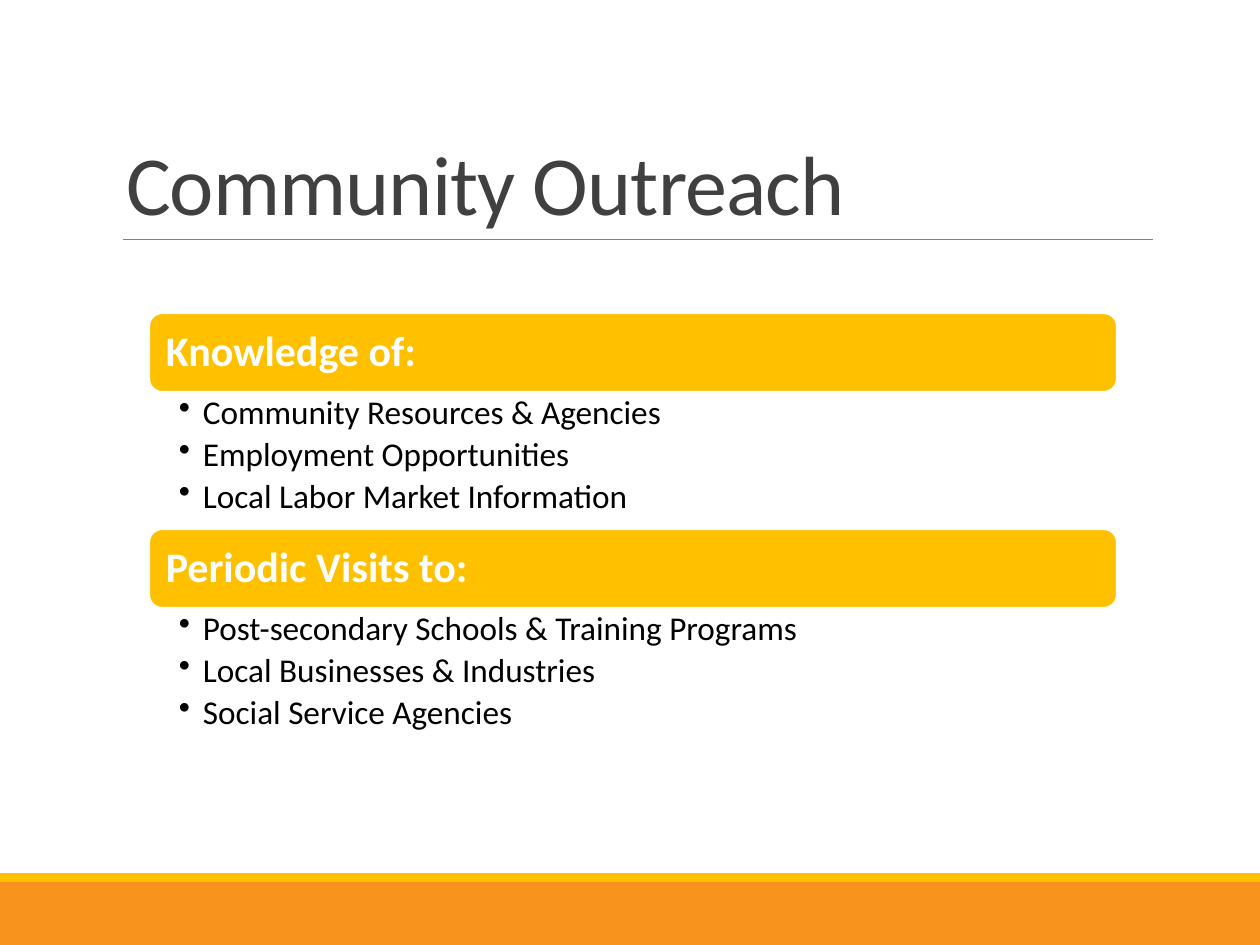
"""Build the Community Outreach slide."""
import dataclasses

import lxml.etree
import pptx
import pptx.dml.color
import pptx.enum.shapes
import pptx.enum.text
import pptx.oxml.ns
import pptx.util

PX_PER_INCH = 126
SHAPE = pptx.enum.shapes.MSO_SHAPE
ANCHOR = pptx.enum.text.MSO_ANCHOR


@dataclasses.dataclass(frozen=True)
class Theme:
    """Colours, font and type sizes of the slide."""
    font: str = "Calibri"
    orange: str = "F8931D"
    amber: str = "FFC000"
    rule: str = "808080"
    title: str = "404040"
    white: str = "FFFFFF"
    black: str = "000000"
    title_size: int = 48
    heading_size: int = 24
    bullet_size: int = 19


THEME = Theme()
SECTIONS = [
    ("Knowledge of:", [
        "Community Resources & Agencies",
        "Employment Opportunities",
        "Local Labor Market Information",
    ]),
    ("Periodic Visits to:", [
        "Post-secondary Schools & Training Programs",
        "Local Businesses & Industries",
        "Social Service Agencies",
    ]),
]
SECTION_LEFT, SECTION_TOP, SECTION_WIDTH = 149, 313, 968
HEADING_HEIGHT, LIST_HEIGHT = 79, 137


def px(length):
    """Turn a length in px into EMU."""
    return pptx.util.Emu(round(length * pptx.util.Inches(1) / PX_PER_INCH))


def rgb(colour):
    """Return the colour object of a hex string."""
    return pptx.dml.color.RGBColor.from_string(colour)


def style_paragraph(para, size, colour, bold=False, line_spacing=0.9):
    """Align a paragraph left and set its font."""
    para.alignment = pptx.enum.text.PP_ALIGN.LEFT
    para.line_spacing = line_spacing
    para.font.name = THEME.font
    para.font.size = pptx.util.Pt(size)
    para.font.bold = bold
    para.font.color.rgb = rgb(colour)


def set_frame(frame, anchor, left, top, right, bottom):
    """Wrap a text frame and set its anchor and insets."""
    frame.word_wrap = True
    frame.vertical_anchor = anchor
    frame.margin_left, frame.margin_top = px(left), px(top)
    frame.margin_right, frame.margin_bottom = px(right), px(bottom)


def add_block(page, kind, left, top, width, height, fill):
    """Add a filled shape without line or shadow."""
    block = page.shapes.add_shape(kind, px(left), px(top), px(width), px(height))
    block.shadow.inherit = False
    block.fill.solid()
    block.fill.fore_color.rgb = rgb(fill)
    block.line.fill.background()
    return block


def add_rule(page, left, right, y):
    """Add the thin line under the title."""
    rule = page.shapes.add_connector(
        pptx.enum.shapes.MSO_CONNECTOR.STRAIGHT, px(left), px(y), px(right), px(y))
    rule.line.color.rgb = rgb(THEME.rule)
    rule.line.width = pptx.util.Pt(0.5)
    lxml.etree.SubElement(rule._element.spPr, pptx.oxml.ns.qn("a:effectLst"))


def set_title(page, text):
    """Place and format the title placeholder."""
    title = page.shapes.title
    title.left, title.top = px(113), px(39)
    title.width, title.height = px(1040), px(200)
    frame = title.text_frame
    frame.text = text
    frame.auto_size = pptx.enum.text.MSO_AUTO_SIZE.NONE
    set_frame(frame, ANCHOR.BOTTOM, 13, 6, 13, 6)
    para = frame.paragraphs[0]
    style_paragraph(para, THEME.title_size, THEME.title, line_spacing=0.85)
    para._p.pPr.find(pptx.oxml.ns.qn("a:defRPr")).set("spc", "-50")


def add_heading(page, top, text):
    """Add a rounded section heading."""
    bar = add_block(page, SHAPE.ROUNDED_RECTANGLE, SECTION_LEFT, top,
                    SECTION_WIDTH, HEADING_HEIGHT, THEME.amber)
    bar.line.color.rgb = rgb(THEME.white)
    bar.line.width = pptx.util.Pt(1.25)
    bar.text_frame.text = text
    set_frame(bar.text_frame, ANCHOR.MIDDLE, 13, 13, 13, 13)
    style_paragraph(bar.text_frame.paragraphs[0], THEME.heading_size, THEME.white, bold=True)


def add_bullets(page, top, items):
    """Add the bulleted list of a section."""
    box = page.shapes.add_textbox(
        px(SECTION_LEFT), px(top), px(SECTION_WIDTH), px(LIST_HEIGHT))
    frame = box.text_frame
    frame.text = "\n".join(items)
    set_frame(frame, ANCHOR.TOP, 30, 4, 24, 4)
    for para in frame.paragraphs:
        props = para._p.get_or_add_pPr()
        props.set("marL", str(px(24)))
        props.set("indent", str(-px(24)))
        lxml.etree.SubElement(props, pptx.oxml.ns.qn("a:buChar")).set("char", "•")
        para.space_after = pptx.util.Pt(3.5)
        style_paragraph(para, THEME.bullet_size, THEME.black)


def main():
    """Build and save the deck."""
    deck = pptx.Presentation()
    deck.slide_width, deck.slide_height = px(1260), px(945)
    page = deck.slides.add_slide(deck.slide_layouts.get_by_name("Title Only"))
    add_block(page, SHAPE.RECTANGLE, 0, 882, 1260, 63, THEME.orange)
    add_block(page, SHAPE.RECTANGLE, 0, 873, 1260, 9, THEME.amber)
    add_rule(page, 123, 1153, 239)
    set_title(page, "Community Outreach")
    for index, (heading, items) in enumerate(SECTIONS):
        top = SECTION_TOP + index * (HEADING_HEIGHT + LIST_HEIGHT)
        add_heading(page, top, heading)
        add_bullets(page, top + HEADING_HEIGHT, items)
    deck.save("out.pptx")


if __name__ == "__main__":
    main()
